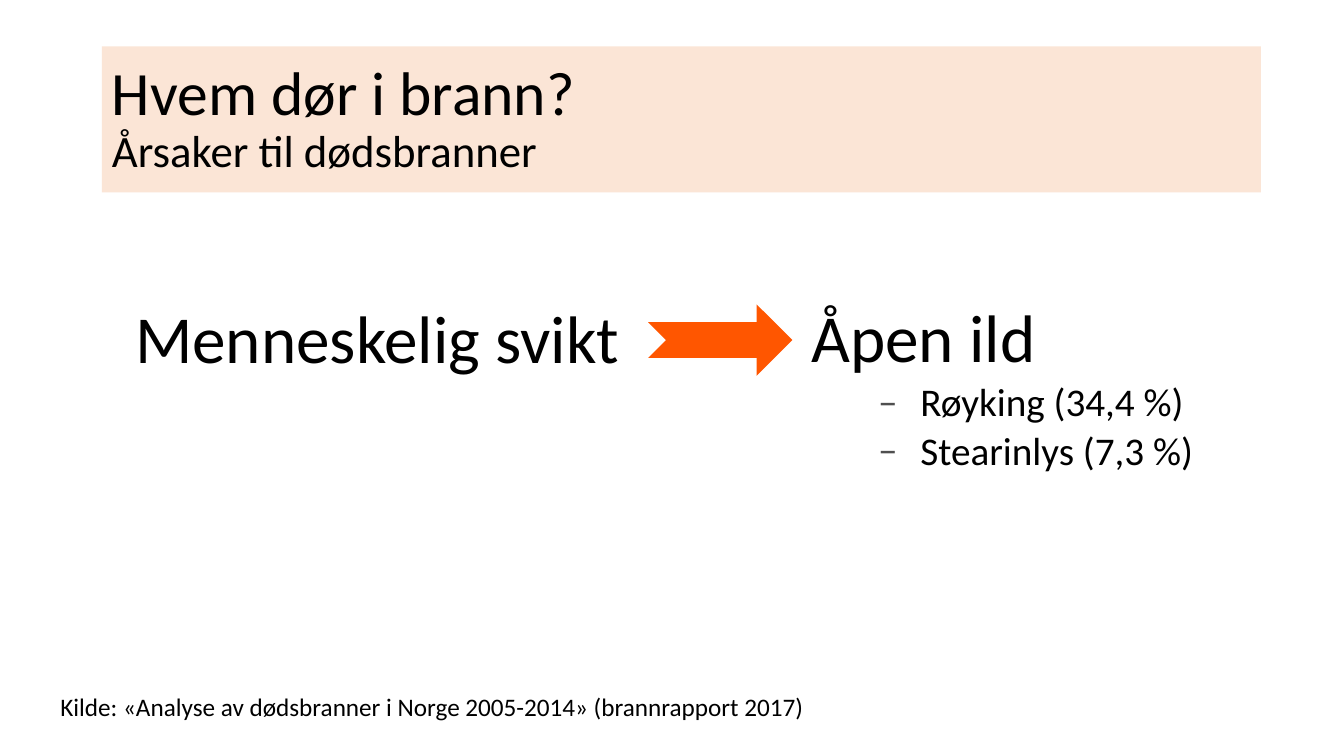
from lxml.etree import SubElement
from pptx import Presentation
from pptx.dml.color import RGBColor
from pptx.enum.shapes import MSO_SHAPE as Preset
from pptx.enum.text import MSO_ANCHOR as Anchor, MSO_AUTO_SIZE as AutoSize, PP_ALIGN as Align
from pptx.oxml.ns import qn
from pptx.util import Pt

COLORS = {"text": "000000", "banner": "FBE5D6", "arrow": "FF5600", "dash": "4F4F4F"}
FONT = "Calibri"

BODY = {"line_spacing": 0.9, "alignment": Align.LEFT}
SUBITEM = BODY | {"level": 1, "space_before": Pt(4.3)}
SOURCE = {"alignment": Align.LEFT}

NO_INSETS = dict.fromkeys(("margin_left", "margin_top", "margin_right", "margin_bottom"), 0)
COLUMN_FRAME = NO_INSETS | {"word_wrap": True}
TITLE_FRAME = {"vertical_anchor": Anchor.MIDDLE, "word_wrap": True, "auto_size": AutoSize.NONE}
SOURCE_FRAME = {"word_wrap": False, "auto_size": AutoSize.SHAPE_TO_FIT_TEXT}


def rgb(name):
    return RGBColor.from_string(COLORS[name])


def set_attributes(target, values):
    for name, value in values.items():
        setattr(target, name, value)


def add_dash(paragraph):
    """Give the paragraph a grey en dash on a hanging indent."""
    properties = paragraph._p.get_or_add_pPr()
    properties.set("marL", str(Pt(77.8)))
    properties.set("indent", str(Pt(-30.2)))
    color = SubElement(properties, qn("a:buClr"))
    SubElement(color, qn("a:srgbClr"), val=COLORS["dash"])
    SubElement(properties, qn("a:buFont"), typeface=FONT)
    SubElement(properties, qn("a:buChar"), char="–")


def write_lines(frame, frame_format, lines):
    """Write (text, size, paragraph format) lines into a text frame."""
    set_attributes(frame, frame_format)
    for index, (text, size, line_format) in enumerate(lines):
        paragraph = frame.add_paragraph() if index else frame.paragraphs[0]
        set_attributes(paragraph, line_format)
        if paragraph.level:
            add_dash(paragraph)
        run = paragraph.add_run()
        run.text = text
        set_attributes(run.font, {"name": FONT, "size": Pt(size)})
        run.font.color.rgb = rgb("text")


def fill_title(title, lines):
    set_attributes(title, {"left": Pt(72.7), "top": Pt(33.1),
                           "width": Pt(828), "height": Pt(104.4)})
    title.fill.solid()
    title.fill.fore_color.rgb = rgb("banner")
    write_lines(title.text_frame, TITLE_FRAME, lines)


def add_text(slide, left, top, width, height, frame_format, lines):
    box = slide.shapes.add_textbox(Pt(left), Pt(top), Pt(width), Pt(height))
    write_lines(box.text_frame, frame_format, lines)


def add_arrow(slide, left, top, width, height):
    arrow = slide.shapes.add_shape(Preset.NOTCHED_RIGHT_ARROW,
                                   Pt(left), Pt(top), Pt(width), Pt(height))
    arrow.shadow.inherit = False
    arrow.fill.solid()
    arrow.fill.fore_color.rgb = rgb("arrow")
    arrow.line.fill.background()


def main():
    deck = Presentation()
    set_attributes(deck, {"slide_width": Pt(960), "slide_height": Pt(540)})
    slide = deck.slides.add_slide(deck.slide_layouts.get_by_name("Title Only"))

    fill_title(slide.shapes.title, [
        ("Hvem dør i brann?", 44, BODY),
        ("Årsaker til dødsbranner", 32, BODY),
    ])
    add_text(slide, 96.5, 218, 366.5, 245.5, COLUMN_FRAME, [
        ("Menneskelig svikt", 48, BODY),
    ])
    add_text(slide, 579.6, 217.4, 366.5, 247, COLUMN_FRAME, [
        ("Åpen ild", 48, BODY),
        ("Røyking (34,4 %)", 28, SUBITEM),
        ("Stearinlys (7,3 %)", 28, SUBITEM),
    ])
    add_arrow(slide, 463, 217.4, 103, 51.1)
    add_text(slide, 36, 490.3, 545.8, 28.8, SOURCE_FRAME, [
        ("Kilde: «Analyse av dødsbranner i Norge 2005-2014» (brannrapport 2017)", 18, SOURCE),
    ])
    deck.save("out.pptx")


if __name__ == "__main__":
    main()
